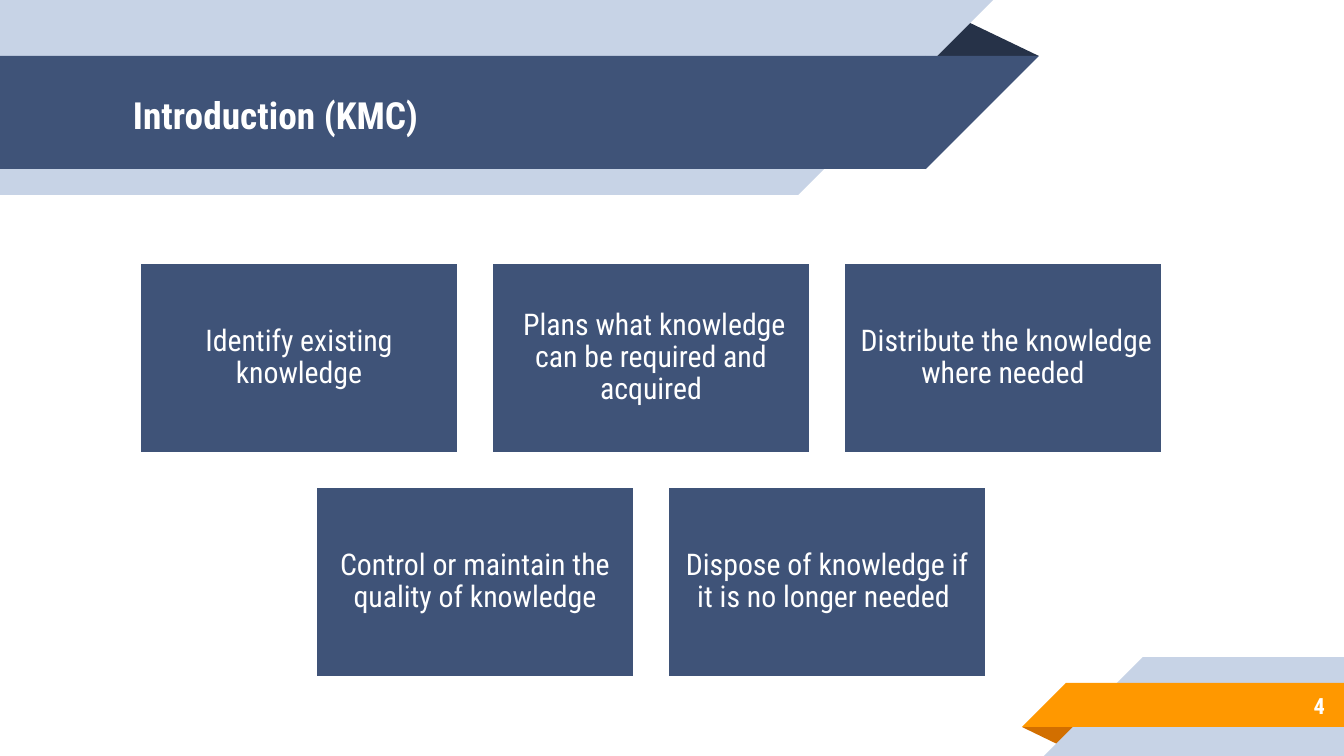
"""Build the knowledge management introduction slide."""
from pptx import Presentation
from pptx.dml.color import RGBColor
from pptx.enum.shapes import MSO_SHAPE as SHAPE
from pptx.enum.text import MSO_ANCHOR as ANCHOR, PP_ALIGN as ALIGN
from pptx.util import Emu, Pt

PX = 914400 / 134.4
FONT = "Roboto Condensed"
WHITE, NAVY, DARK = "FFFFFF", "3F5378", "263248"
PALE, ORANGE, RUST = "C7D3E6", "FF9800", "D26F00"
CARD_ROWS = [
    (139, ["Identify existing knowledge",
           " Plans what knowledge can be required and acquired",
           " Distribute the knowledge where needed"]),
    (315, ["Control or maintain the quality of knowledge",
           "Dispose of knowledge if it is no longer needed "]),
]
CARD_W, CARD_H, CARD_TOP, GAP = 320, 192, 262, 32


def px(n):
    """Turn pixels into EMU."""
    return Emu(round(n * PX))


def rgb(color):
    """Turn a hex string into a colour."""
    return RGBColor.from_string(color)


def add_block(s, kind, box, color):
    """Add a filled shape without outline or shadow."""
    sp = s.shapes.add_shape(kind, *map(px, box))
    sp.shadow.inherit = False
    sp.fill.solid()
    sp.fill.fore_color.rgb = rgb(color)
    sp.line.fill.background()
    return sp


def add_fold(s, box, color, rotation=0):
    """Add the small triangle that shades a ribbon's fold."""
    sp = add_block(s, SHAPE.ISOSCELES_TRIANGLE, box, color)
    sp.adjustments[0] = 0.324
    sp.rotation = rotation


def add_band(s, x, y, w, h, color, from_left):
    """Add a bar whose inner end is cut at 45 degrees."""
    add_block(s, SHAPE.RECTANGLE, (x, y, w, h), color)
    tip_x = x + w if from_left else x - h
    tip = add_block(s, SHAPE.RIGHT_TRIANGLE, (tip_x, y, h, h), color)
    tip.element.spPr.xfrm.set("flipH", "1")
    tip.rotation = 180 if from_left else 0


def set_text(sp, text, size, align, inset, bold=False):
    """Write one white, vertically centred paragraph into a shape."""
    tf = sp.text_frame
    tf.word_wrap = True
    tf.vertical_anchor = ANCHOR.MIDDLE
    tf.margin_left = tf.margin_right = px(inset)
    tf.margin_top = tf.margin_bottom = px(inset)
    p = tf.paragraphs[0]
    p.alignment = align
    r = p.add_run()
    r.text = text
    r.font.name = FONT
    r.font.size = Pt(size)
    r.font.bold = bold
    r.font.color.rgb = rgb(WHITE)
    return p


def add_label(s, box, text, size, align):
    """Add a bold text box."""
    sp = s.shapes.add_textbox(*map(px, box))
    set_text(sp, text, size, align, 13, bold=True)


def add_card(s, x, y, text):
    """Add a navy card with centred text."""
    sp = add_block(s, SHAPE.RECTANGLE, (x, y, CARD_W, CARD_H), NAVY)
    sp.line.color.rgb = rgb(WHITE)
    sp.line.width = Pt(2)
    p = set_text(sp, text, 16, ALIGN.CENTER, 9)
    p.line_spacing = 0.9


def main():
    """Build and save the slide."""
    prs = Presentation()
    prs.slide_width, prs.slide_height = px(1344), px(756)
    s = prs.slides.add_slide(prs.slide_layouts[6])

    add_fold(s, (1022, 727, 58, 19), RUST, rotation=180)
    add_band(s, 1143, 657, 201, 99, PALE, from_left=False)
    add_band(s, 1066, 683, 278, 44, ORANGE, from_left=False)
    add_fold(s, (925, 19, 114, 37), DARK)
    add_band(s, 0, 0, 798, 195, PALE, from_left=True)
    add_band(s, 0, 56, 926, 113, NAVY, from_left=True)

    add_label(s, (120, 58, 808, 113), "Introduction (KMC)", 20, ALIGN.LEFT)
    add_label(s, (1120, 682, 218, 47), "4", 12, ALIGN.RIGHT)

    for row, (left, texts) in enumerate(CARD_ROWS):
        for col, text in enumerate(texts):
            add_card(s, left + col * (CARD_W + GAP),
                     CARD_TOP + row * (CARD_H + GAP), text)

    prs.save("out.pptx")


if __name__ == "__main__":
    main()
